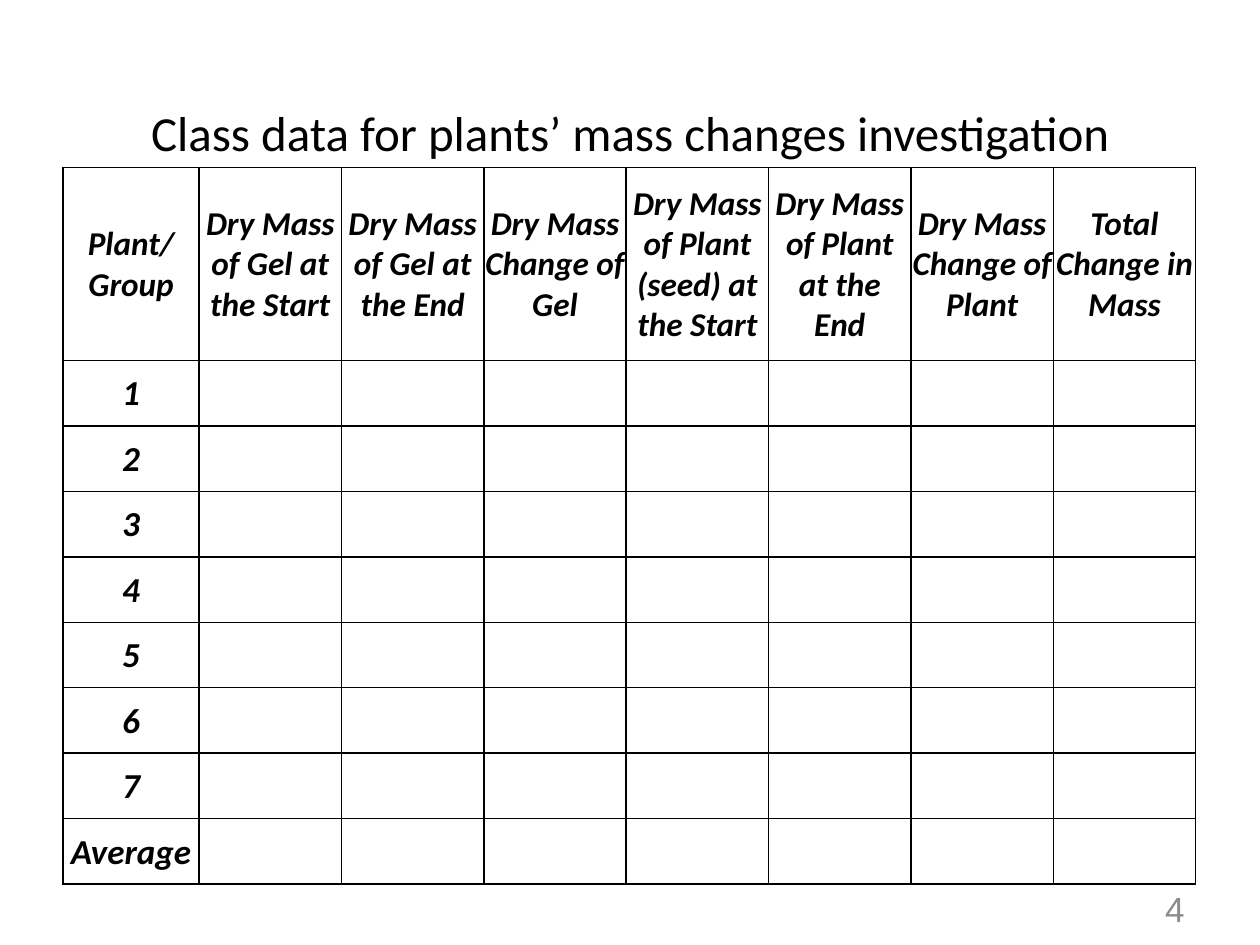
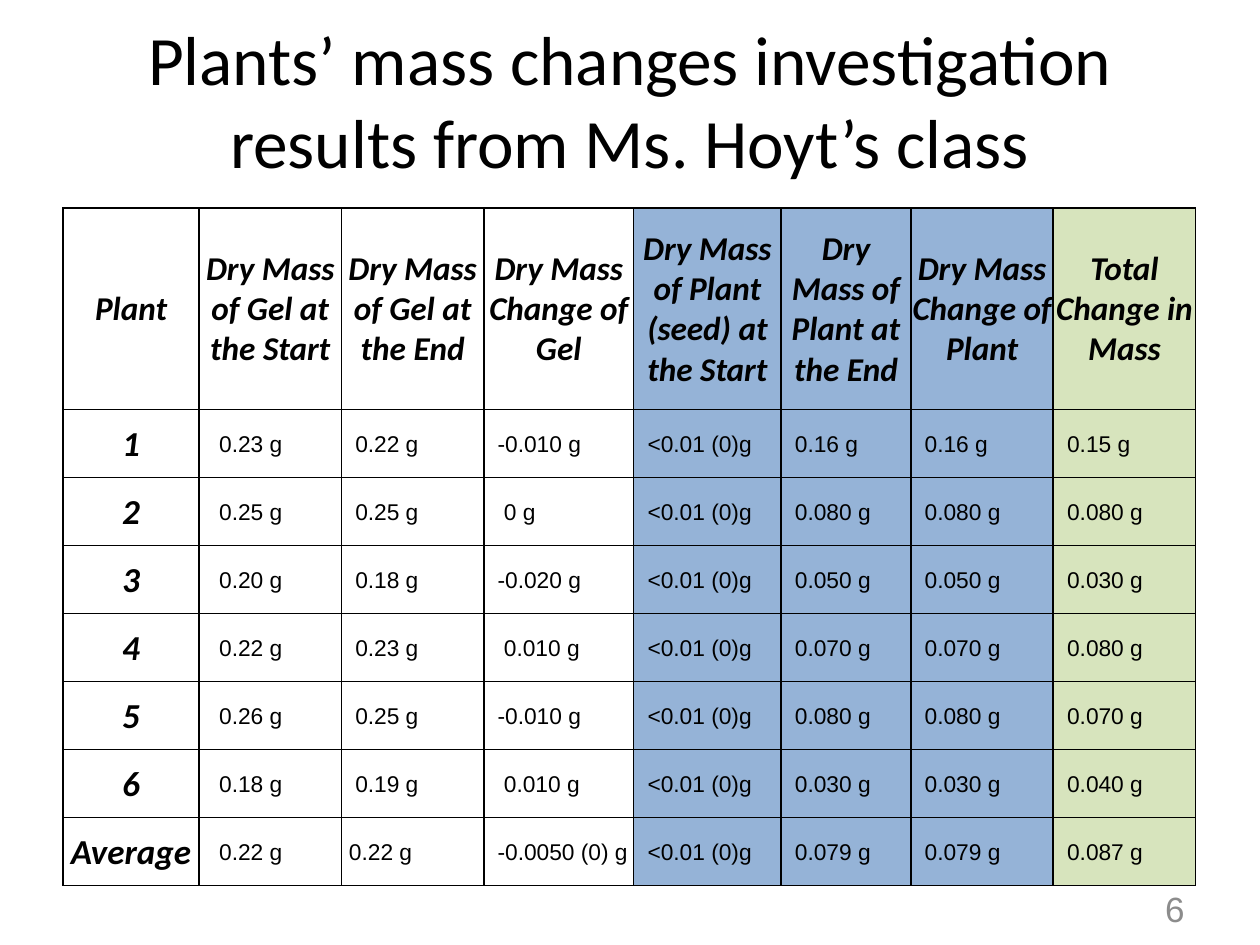
from dataclasses import dataclass

from lxml.etree import SubElement
from pptx import Presentation
from pptx.dml.color import RGBColor
from pptx.enum.text import MSO_ANCHOR as Anchor, PP_ALIGN as Align
from pptx.oxml.ns import qn
from pptx.util import Inches, Pt

BLACK, GREY = "000000", "8C8C8C"
BLUE, GREEN = "95B3D7", "D7E4BD"
LEFT, WIDTH = 0.5, 9
SPACE = 0.05
BORDER_PT = 1
MEASURES = [
    "Dry Mass of Gel at the Start",
    "Dry Mass of Gel at the End",
    "Dry Mass Change of Gel",
    "Dry Mass of Plant (seed) at the Start",
    "Dry Mass of Plant at the End",
    "Dry Mass Change of Plant",
    "Total Change in Mass",
]
SEED = "<0.01 (0)g"
RESULTS = [
    ["0.23 g", "0.22 g", "-0.010 g", SEED, "0.16 g", "0.16 g", "0.15 g"],
    ["0.25 g", "0.25 g", "0 g", SEED, "0.080 g", "0.080 g", "0.080 g"],
    ["0.20 g", "0.18 g", "-0.020 g", SEED, "0.050 g", "0.050 g", "0.030 g"],
    ["0.22 g", "0.23 g", "0.010 g", SEED, "0.070 g", "0.070 g", "0.080 g"],
    ["0.26 g", "0.25 g", "-0.010 g", SEED, "0.080 g", "0.080 g", "0.070 g"],
    ["0.18 g", "0.19 g", "0.010 g", SEED, "0.030 g", "0.030 g", "0.040 g"],
    ["0.22 g", "0.22 g", "-0.0050 (0) g", SEED, "0.079 g", "0.079 g", "0.087 g"],
]


@dataclass(frozen=True)
class TextStyle:
    size: float
    font: str = "Calibri"
    color: str = BLACK
    strong: bool = False
    align: Align = Align.CENTER


HEADING = TextStyle(19, strong=True)
GROUP_LABEL = TextStyle(20, strong=True)
MEASUREMENT = TextStyle(13, "Arial", align=Align.LEFT)
PAGE_NUMBER = TextStyle(20, "Arial", GREY, align=Align.RIGHT)


@dataclass(frozen=True)
class DataSlide:
    title: str
    title_top: float
    title_size: float
    page: int
    corner: str
    groups: int
    table_top: float
    header_height: float
    row_height: float
    column_widths: list[float]
    results: list[list[str]]
    fills: dict[int, str]


DATA_SLIDES = [
    DataSlide(
        "Class data for plants’ mass changes investigation", 0.5, 28, 4,
        "Plant/Group", 7, 1.33, 1.53, 0.52, [1.08] + [1.13] * 7, [], {},
    ),
    DataSlide(
        "Plants’ mass changes investigation results from Ms. Hoyt’s class",
        0.24, 39.6, 6, "Plant", 6, 1.65, 1.6, 0.54,
        [1.08, 1.13, 1.13, 1.19, 1.17, 1.03, 1.13, 1.13],
        RESULTS, {4: BLUE, 5: BLUE, 6: BLUE, 7: GREEN},
    ),
]


def rgb(color: str) -> RGBColor:
    return RGBColor.from_string(color)


def write(frame, text: str, style: TextStyle) -> None:
    paragraph = frame.paragraphs[0]
    paragraph.alignment = style.align
    run = paragraph.add_run()
    run.text = text
    run.font.size = Pt(style.size)
    run.font.name = style.font
    run.font.bold = run.font.italic = style.strong
    run.font.color.rgb = rgb(style.color)


def add_text(slide, text: str, box: tuple[float, ...], style: TextStyle) -> None:
    frame = slide.shapes.add_textbox(*map(Inches, box)).text_frame
    frame.word_wrap = True
    frame.vertical_anchor = Anchor.MIDDLE
    write(frame, text, style)


def format_cell(cell, fill: str | None) -> None:
    properties = cell._tc.get_or_add_tcPr()
    for side in ("a:lnL", "a:lnR", "a:lnT", "a:lnB"):
        border = SubElement(properties, qn(side), w=str(Pt(BORDER_PT)))
        solid = SubElement(border, qn("a:solidFill"))
        SubElement(solid, qn("a:srgbClr"), val=BLACK)
    if fill:
        cell.fill.solid()
        cell.fill.fore_color.rgb = rgb(fill)
    else:
        cell.fill.background()


def write_cell(cell, text: str, style: TextStyle, indent: float = 0) -> None:
    cell.vertical_anchor = Anchor.MIDDLE
    cell.margin_left = Inches(0.01 + indent)
    cell.margin_right = cell.margin_top = Inches(0.01)
    cell.margin_bottom = 0
    write(cell.text_frame, text, style)


def measurement_indent(column: int, text: str, is_average: bool) -> float:
    if column == 1 or (column == 3 and not text.startswith("-")):
        return 3 * SPACE
    return SPACE if column == 2 and is_average else 2 * SPACE


def add_data_table(slide, data: DataSlide) -> None:
    labels = [str(group) for group in range(1, data.groups + 1)] + ["Average"]
    heights = [data.header_height] + [data.row_height] * len(labels)
    table = slide.shapes.add_table(
        len(heights), len(data.column_widths), Inches(LEFT),
        Inches(data.table_top), Inches(WIDTH), Inches(sum(heights)),
    ).table
    table.first_row = table.horz_banding = False
    for column, width in zip(table.columns, data.column_widths):
        column.width = Inches(width)
    for row, height in zip(table.rows, heights):
        row.height = Inches(height)
        for column, cell in enumerate(row.cells):
            format_cell(cell, data.fills.get(column))
    for column, heading in enumerate([data.corner] + MEASURES):
        write_cell(table.cell(0, column), heading, HEADING)
    for row, label in enumerate(labels, 1):
        write_cell(table.cell(row, 0), label, GROUP_LABEL)
    for row, values in enumerate(data.results, 1):
        for column, value in enumerate(values, 1):
            indent = measurement_indent(column, value, row == len(labels))
            write_cell(table.cell(row, column), value, MEASUREMENT, indent)


def add_data_slide(deck, data: DataSlide) -> None:
    slide = deck.slides.add_slide(deck.slide_layouts[6])
    add_text(slide, data.title, (LEFT, data.title_top, WIDTH, 1.09),
             TextStyle(data.title_size))
    add_data_table(slide, data)
    add_text(slide, str(data.page), (7.17, 7.01, 2.33, 0.4), PAGE_NUMBER)


def main() -> None:
    deck = Presentation()
    deck.slide_width, deck.slide_height = Inches(10), Inches(7.5)
    for data in DATA_SLIDES:
        add_data_slide(deck, data)
    deck.save("out.pptx")


if __name__ == "__main__":
    main()
